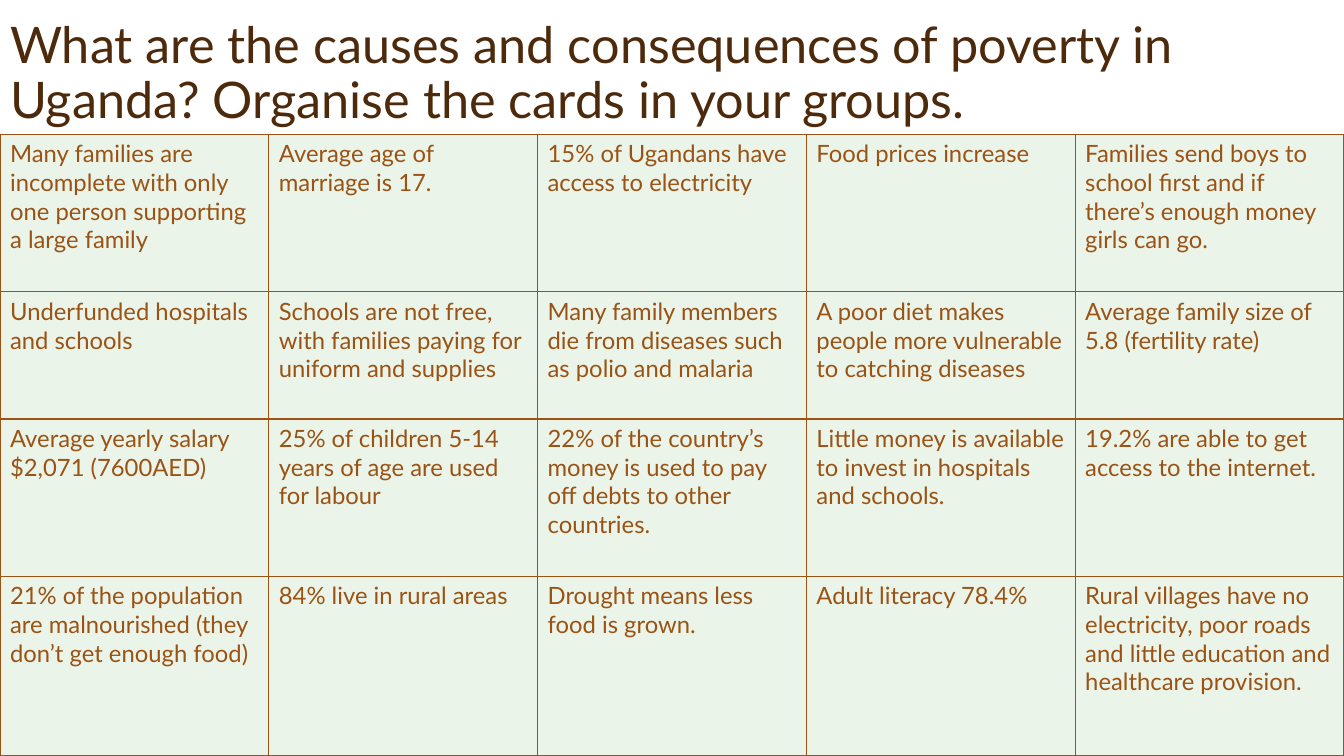
from dataclasses import dataclass

from lxml.etree import SubElement
from pptx import Presentation
from pptx.dml.color import RGBColor
from pptx.enum.text import MSO_ANCHOR, MSO_AUTO_SIZE, PP_ALIGN
from pptx.oxml.ns import qn
from pptx.util import Pt

EMU_PER_PX = 9525
SLIDE_WIDTH, SLIDE_HEIGHT = 1280, 720
TITLE_HEIGHT = 128
ROW_SHARES = [150, 121, 150, 171]


@dataclass(frozen=True)
class Theme:
    font: str = "Lato"
    title_color: str = "4D2A0B"
    card_text: str = "9A5315"
    card_fill: str = "EBF4E8"
    border: str = "9A5315"
    title_size: int = 36
    card_size: int = 17
    border_width: int = 1


THEME = Theme()

TITLE = "What are the causes and consequences of poverty in Uganda? Organise the cards in your groups."

CARDS = [
    [
        "Many families are incomplete with only one person supporting a large family",
        "Average age of marriage is 17.",
        "15% of Ugandans have access to electricity",
        "Food prices increase",
        "Families send boys to school first and if there’s enough money girls can go.",
    ],
    [
        "Underfunded hospitals and schools",
        "Schools are not free, with families paying for uniform and supplies",
        "Many family members die from diseases such as polio and malaria",
        "A poor diet makes people more vulnerable to catching diseases",
        "Average family size of 5.8 (fertility rate)",
    ],
    [
        "Average yearly salary $2,071 (7600AED)",
        "25% of children 5-14 years of age are used for labour",
        "22% of the country’s money is used to pay off debts to other countries.",
        "Little money is available to invest in hospitals and schools.",
        "19.2% are able to get access to the internet.",
    ],
    [
        "21% of the population are malnourished (they don’t get enough food)",
        "84% live in rural areas",
        "Drought means less food is grown.",
        "Adult literacy 78.4%",
        "Rural villages have no electricity, poor roads and little education and healthcare provision.",
    ],
]


def px(length):
    return round(length * EMU_PER_PX)


def format_runs(paragraph, size, color):
    for run in paragraph.runs:
        run.font.name = THEME.font
        run.font.size = Pt(size)
        run.font.color.rgb = RGBColor.from_string(color)


def add_borders(cell):
    properties = cell._tc.get_or_add_tcPr()
    for position, side in enumerate(("a:lnL", "a:lnR", "a:lnT", "a:lnB")):
        line = SubElement(properties, qn(side), w=str(Pt(THEME.border_width)))
        fill = SubElement(line, qn("a:solidFill"))
        SubElement(fill, qn("a:srgbClr"), val=THEME.border)
        properties.insert(position, line)


def place_title(slide, left, top, width, height):
    title = slide.shapes.title
    title.left, title.top, title.width, title.height = map(px, (left, top, width, height))
    frame = title.text_frame
    frame.text = TITLE
    frame.word_wrap = True
    frame.auto_size = MSO_AUTO_SIZE.NONE
    frame.vertical_anchor = MSO_ANCHOR.BOTTOM
    paragraph = frame.paragraphs[0]
    paragraph.alignment = PP_ALIGN.LEFT
    paragraph.line_spacing = 0.9
    format_runs(paragraph, THEME.title_size, THEME.title_color)


def place_cards(slide, left, top, width, height):
    column_count = len(CARDS[0])
    table = slide.shapes.add_table(
        len(CARDS), column_count, px(left), px(top), px(width), px(height)
    ).table
    table.first_row = False
    table.horz_banding = False
    for column in table.columns:
        column.width = px(width / column_count)
    for row, share, texts in zip(table.rows, ROW_SHARES, CARDS):
        row.height = px(height * share / sum(ROW_SHARES))
        for cell, text in zip(row.cells, texts):
            cell.text_frame.text = text
            cell.fill.solid()
            cell.fill.fore_color.rgb = RGBColor.from_string(THEME.card_fill)
            add_borders(cell)
            format_runs(cell.text_frame.paragraphs[0], THEME.card_size, THEME.card_text)


def main():
    presentation = Presentation()
    presentation.slide_width = px(SLIDE_WIDTH)
    presentation.slide_height = px(SLIDE_HEIGHT)
    slide = presentation.slides.add_slide(presentation.slide_layouts.get_by_name("Title Only"))
    place_title(slide, 0, 0, SLIDE_WIDTH, TITLE_HEIGHT)
    place_cards(slide, 0, TITLE_HEIGHT, SLIDE_WIDTH, SLIDE_HEIGHT - TITLE_HEIGHT)
    presentation.save("out.pptx")


if __name__ == "__main__":
    main()
